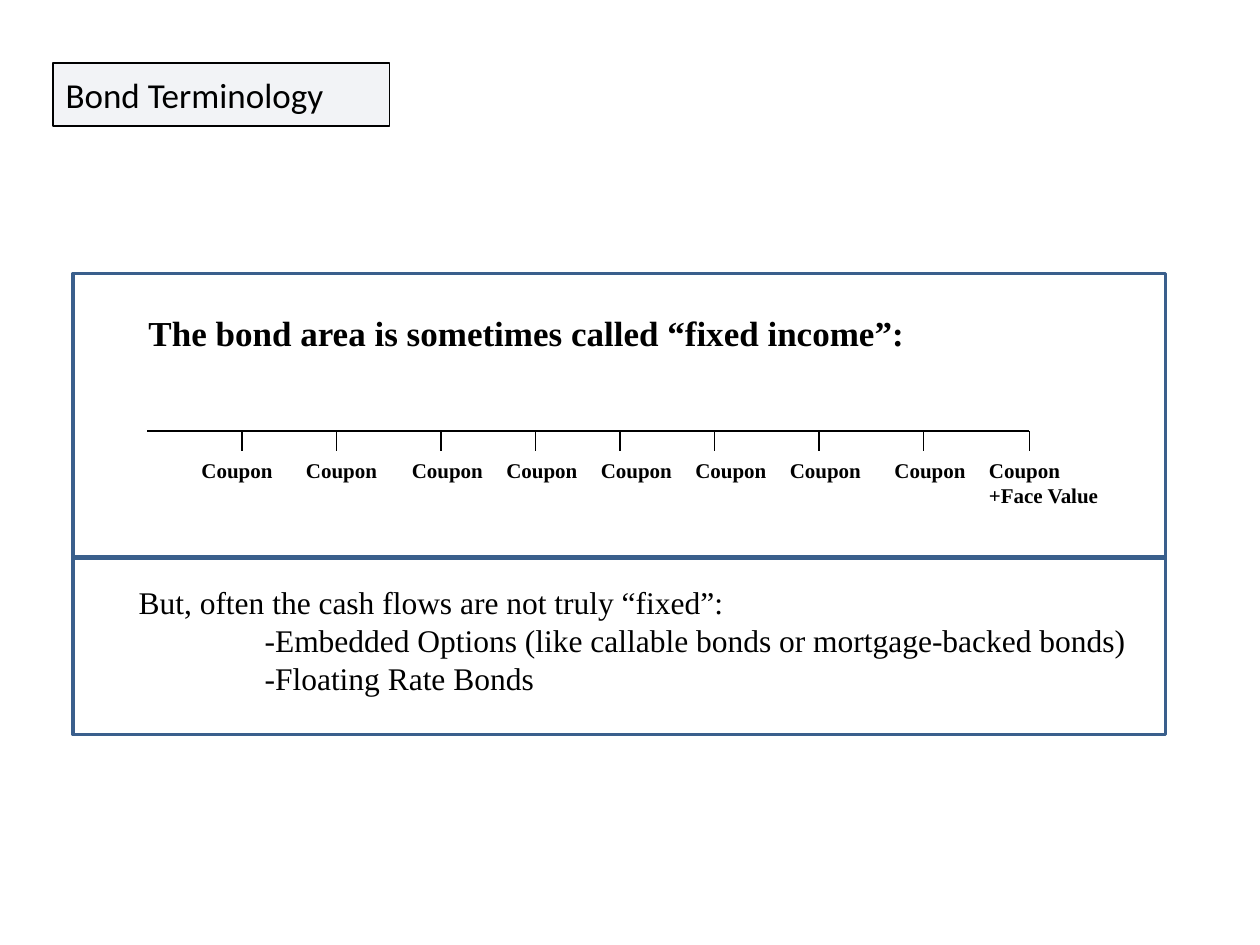
from pptx import Presentation
from pptx.dml.color import RGBColor
from pptx.enum.shapes import MSO_CONNECTOR, MSO_SHAPE
from pptx.enum.text import MSO_ANCHOR, MSO_AUTO_SIZE, PP_ALIGN
from pptx.oxml.ns import qn
from pptx.util import Inches, Pt
from lxml.etree import SubElement

# Content
TITLE = "Bond Terminology"
HEADING = "The bond area is sometimes called “fixed income”:"
REMARKS = [  # text, left indent in inches
    ("But, often the cash flows are not truly “fixed”:", 0),
    ("-Embedded Options (like callable bonds or mortgage-backed bonds)", 1),
    ("-Floating Rate Bonds", 1),
]
PAYMENTS = [  # tick position, label left, label width, label lines
    (1.92, 1.5, 1.08, ["Coupon"]),
    (2.67, 2.33, 1.08, ["Coupon"]),
    (3.5, 3.17, 1.08, ["Coupon"]),
    (4.25, 3.92, 1.08, ["Coupon"]),
    (4.92, 4.67, 1.08, ["Coupon"]),
    (5.67, 5.42, 1.08, ["Coupon"]),
    (6.5, 6.17, 1.08, ["Coupon"]),
    (7.33, 7, 1.08, ["Coupon"]),
    (8.17, 7.75, 1.42, ["Coupon", "+Face Value"]),
]
PANELS = [(2.17, 2.25), (4.43, 1.4)]  # top, height
AXIS_LEFT, AXIS_TOP, TICK_BOTTOM = 1.17, 3.42, 3.58

THEME = {
    "ink": RGBColor(0x00, 0x00, 0x00),
    "panel": RGBColor(0x3A, 0x5F, 0x8C),
    "tint": RGBColor(0x00, 0x20, 0x60),
    "tint_alpha": 5,
    "title_font": "Calibri", "text_font": "Times New Roman",
    "title": 20, "heading": 20, "remark": 18, "label": 12,
    "thin": 0.75, "thick": 2,
}


def place(shape, left, top, width, height):
    shape.left, shape.top = Inches(left), Inches(top)
    shape.width, shape.height = Inches(width), Inches(height)


def write(shape, lines, size, font="text_font", bold=False, wrap=True):
    frame = shape.text_frame
    frame.text = "\n".join(lines)
    frame.word_wrap = wrap
    frame.auto_size = MSO_AUTO_SIZE.NONE
    for para in frame.paragraphs:
        para.alignment = PP_ALIGN.LEFT
        para.space_before = Pt(0)
        para.font.name, para.font.size = THEME[font], Pt(THEME[size])
        para.font.bold, para.font.color.rgb = bold, THEME["ink"]
    return frame


def add_text(page, at, lines, size):
    box = page.shapes.add_textbox(*map(Inches, at))
    write(box, lines, size, bold=True)


def add_line(page, *ends):
    line = page.shapes.add_connector(MSO_CONNECTOR.STRAIGHT, *map(Inches, ends))
    line.line.color.rgb, line.line.width = THEME["ink"], Pt(THEME["thin"])
    SubElement(line._element.spPr, qn("a:effectLst"))


deck = Presentation()
deck.slide_width, deck.slide_height = Inches(10), Inches(7.5)
page = deck.slides.add_slide(deck.slide_layouts[1])
title, body = page.placeholders

# Title on a faint tint
place(title, 0.42, 0.5, 2.67, 0.5)
write(title, [TITLE], "title", "title_font").vertical_anchor = MSO_ANCHOR.MIDDLE
title.fill.solid()
title.fill.fore_color.rgb = THEME["tint"]
tint = title._element.spPr.find(qn("a:solidFill"))[0]
SubElement(tint, qn("a:alpha"), val=str(THEME["tint_alpha"] * 1000))
title.line.color.rgb, title.line.width = THEME["ink"], Pt(THEME["thin"])

# Remarks, indented without bullets
place(body, 1, 4.58, 8.75, 1.82)
frame = write(body, [text for text, _ in REMARKS], "remark")
for para, (_, indent) in zip(frame.paragraphs, REMARKS):
    props = para._p.get_or_add_pPr()
    props.set("marL", str(Inches(indent)))
    props.set("indent", "0")
    bullet = props.makeelement(qn("a:buNone"))
    props.find(qn("a:defRPr")).addprevious(bullet)

# Payment timeline
add_text(page, (1.08, 2.42, 7.67, 0.43), [HEADING], "heading")
add_line(page, AXIS_LEFT, AXIS_TOP, PAYMENTS[-1][0], AXIS_TOP)
for tick, left, width, lines in PAYMENTS:
    add_line(page, tick, AXIS_TOP, tick, TICK_BOTTOM)
    add_text(page, (left, TICK_BOTTOM, width, 0.3 * len(lines)), lines, "label")

# Panel outlines
for top, height in PANELS:
    panel = page.shapes.add_shape(
        MSO_SHAPE.RECTANGLE, *map(Inches, (0.58, top, 8.67, height)))
    panel.shadow.inherit = False
    panel.fill.background()
    panel.line.color.rgb, panel.line.width = THEME["panel"], Pt(THEME["thick"])

deck.save("out.pptx")
